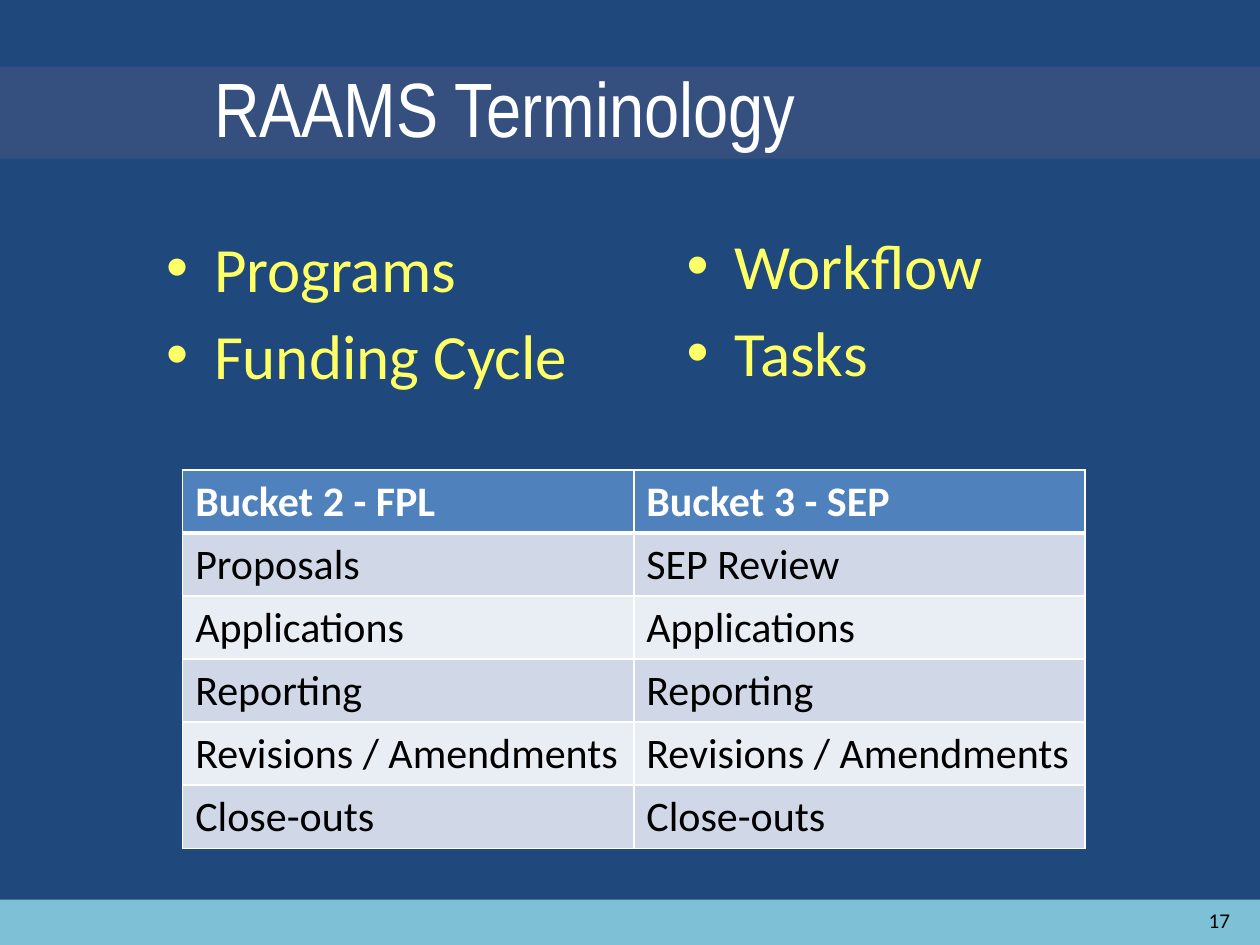
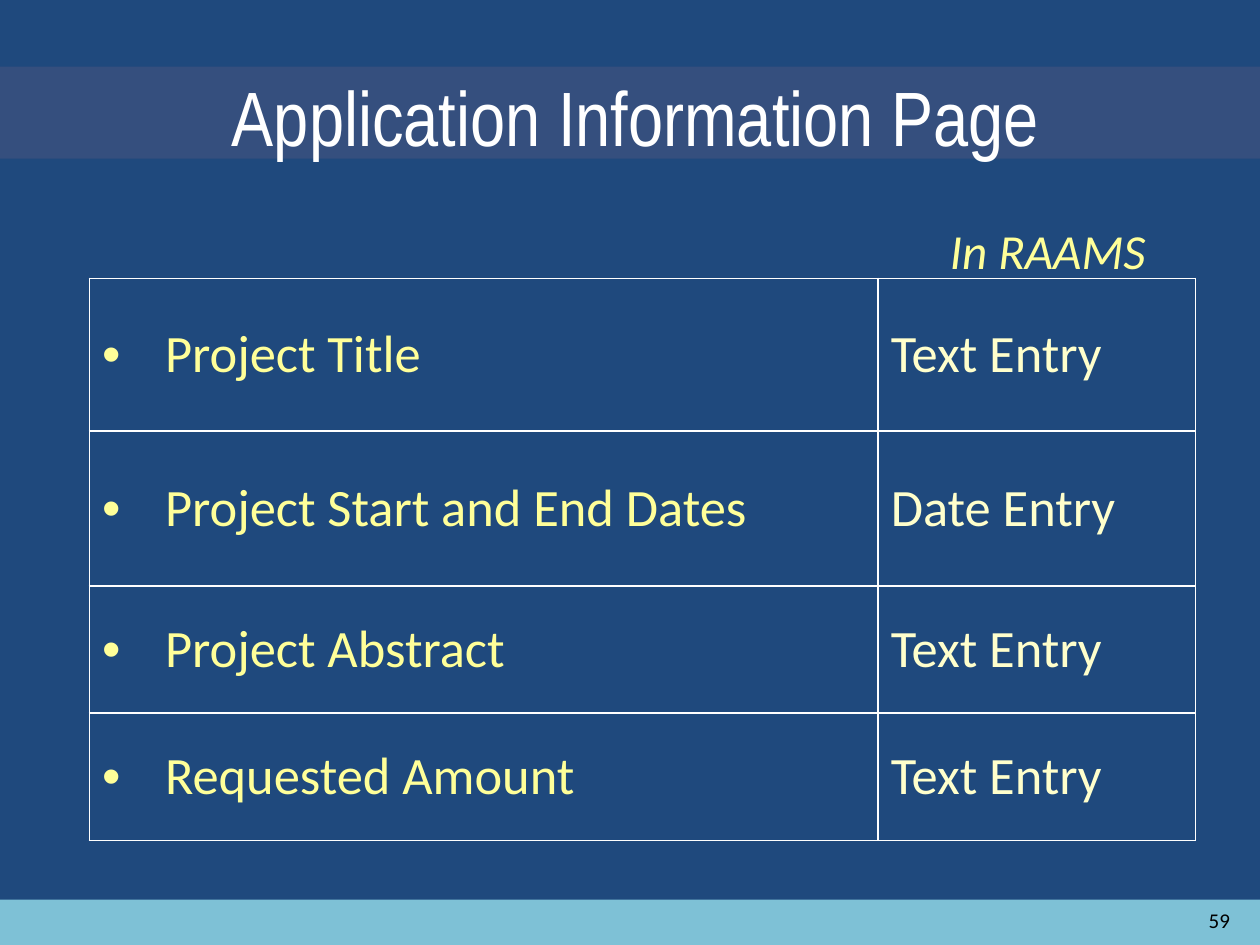
from dataclasses import dataclass
from lxml.etree import SubElement as Sub
from pptx import Presentation
from pptx.dml.color import RGBColor as Rgb
from pptx.enum.shapes import MSO_SHAPE as Kind
from pptx.enum.text import MSO_ANCHOR as Anchor, MSO_AUTO_SIZE as Fit, PP_ALIGN as Align
from pptx.oxml.ns import qn
from pptx.util import Inches, Pt


@dataclass(frozen=True)
class Theme:
    back: str = "1F497D"
    strip: str = "39507F"
    foot: str = "7EC1D6"
    white: str = "FFFFFF"
    black: str = "000000"
    point: str = "FFFF66"
    item: str = "FFFF99"
    entry: str = "FFFFCC"
    head: str = "4F81BD"
    rows: tuple = ("D0D8E8", "E9EDF4")
    face: str = "Calibri"
    display: str = "Arial Narrow"
    title: int = 44
    body: int = 36
    field: int = 30
    label: int = 28
    grid: int = 24
    number: int = 12


class Deck:
    def __init__(self, theme):
        self.theme = theme
        self.file = Presentation()
        self.file.slide_width, self.file.slide_height = Inches(10), Inches(7.5)
        self.slide = None
        fill = self.file.slide_master.background.fill
        fill.solid()
        fill.fore_color.rgb = Rgb.from_string(theme.back)

    def page(self, title, number, place, bottom=0.05):
        t = self.theme
        self.slide = self.file.slides.add_slide(self.file.slide_layouts[5])
        if len(self.file.slides) == 1:
            self.band(0.53, 0.73, t.strip, 87)
            self.band(7.14, 0.38, t.foot)
        box = self.slide.shapes.title
        self.place(box, place)
        frame = box.text_frame
        frame.auto_size = Fit.NONE
        frame.vertical_anchor = Anchor.MIDDLE
        frame.margin_bottom = Inches(bottom)
        para = frame.paragraphs[0]
        para.alignment = Align.LEFT
        self.run(para, title, t.title, t.white, face=t.display)
        self.text((7.53, 7.1, 2.33, 0.4), [str(number)], t.number, t.black,
                  align=Align.RIGHT, anchor=Anchor.MIDDLE)

    def place(self, shape, place):
        shape.left, shape.top, shape.width, shape.height = map(Inches, place)

    def band(self, top, height, color, alpha=100):
        shape = self.slide.shapes.add_shape(
            Kind.RECTANGLE, 0, Inches(top), self.file.slide_width, Inches(height))
        shape.shadow.inherit = False
        shape.line.fill.background()
        shape.fill.solid()
        shape.fill.fore_color.rgb = Rgb.from_string(color)
        if alpha < 100:
            tone = shape.element.spPr.find(f".//{qn('a:srgbClr')}")
            Sub(tone, qn("a:alpha"), val=str(alpha * 1000))
        self.file.slide_master.shapes.element.insert(2, shape.element)

    def run(self, para, text, size, color, face=None, bold=False, italic=False):
        run = para.add_run()
        run.text = text
        font = run.font
        font.name, font.size = face or self.theme.face, Pt(size)
        font.bold, font.italic = bold, italic
        font.color.rgb = Rgb.from_string(color)

    def bullet(self, para, indent):
        props = para._p.get_or_add_pPr()
        props.set("marL", str(Inches(indent)))
        props.set("indent", str(-Inches(indent)))
        Sub(props, qn("a:buFont"), typeface="Arial")
        Sub(props, qn("a:buChar"), char="•")

    def text(self, place, lines, size, color, align=Align.LEFT,
             anchor=Anchor.TOP, indent=0, italic=False):
        box = self.slide.shapes.add_textbox(*map(Inches, place))
        frame = box.text_frame
        frame.word_wrap = True
        frame.vertical_anchor = anchor
        for i, line in enumerate(lines):
            para = frame.add_paragraph() if i else frame.paragraphs[0]
            if indent:
                self.bullet(para, indent)
            if i:
                para.space_before = Pt(6.5)
            para.alignment = align
            self.run(para, line, size, color, italic=italic)

    def edge(self, cell, top=1, bottom=1):
        props = cell._tc.get_or_add_tcPr()
        for side, width in zip("LRTB", (1, 1, top, bottom)):
            line = Sub(props, qn(f"a:ln{side}"), w=str(Pt(width)))
            Sub(Sub(line, qn("a:solidFill")), qn("a:srgbClr"), val=self.theme.white)

    def table(self, left, top, widths, heights, data, style):
        frame = self.slide.shapes.add_table(
            len(data), len(widths), Inches(left), Inches(top),
            Inches(sum(widths)), Inches(sum(heights)))
        grid = frame.table
        grid.first_row = grid.horz_banding = False
        for col, width in zip(grid.columns, widths):
            col.width = Inches(width)
        for row, height in zip(grid.rows, heights):
            row.height = Inches(height)
        for r, line in enumerate(data):
            for c, word in enumerate(line):
                style(grid.cell(r, c), r, c, word)

    def band_cell(self, cell, r, c, word):
        t = self.theme
        head = r == 0
        self.edge(cell, top=3 if r == 1 else 1, bottom=3 if head else 1)
        cell.fill.solid()
        tone = t.head if head else t.rows[(r - 1) % 2]
        cell.fill.fore_color.rgb = Rgb.from_string(tone)
        self.run(cell.text_frame.paragraphs[0], word, t.grid,
                 t.white if head else t.black, bold=head)

    def field_cell(self, cell, r, c, word):
        t = self.theme
        self.edge(cell)
        cell.fill.background()
        cell.vertical_anchor = Anchor.MIDDLE
        para = cell.text_frame.paragraphs[0]
        if c == 0:
            self.bullet(para, 0.5)
        self.run(para, word, t.field, t.entry if c else t.item)


def terms(deck):
    t = deck.theme
    deck.page("RAAMS Terminology", 17, (1.6, 0.58, 7.11, 1.25), bottom=0.77)
    for left, top, lines in ((1.22, 1.77, ("Programs", "Funding Cycle")),
                             (5.35, 1.75, ("Workflow", "Tasks"))):
        deck.text((left, top, 4.42, 4.95), lines, t.body, t.point, indent=0.38)
    steps = [("Bucket 2 - FPL", "Bucket 3 - SEP"), ("Proposals", "SEP Review")]
    shared = ("Applications", "Reporting", "Revisions / Amendments", "Close-outs")
    steps += [(step, step) for step in shared]
    deck.table(1.45, 3.73, [3.58] * 2, [0.5] * len(steps), steps, deck.band_cell)


def fields(deck):
    t = deck.theme
    deck.page("Application Information Page", 59, (1.74, 0.29, 7.57, 1.25))
    deck.text((0.15, 1.7, 9.04, 4.95), ["In RAAMS"], t.label, t.item,
              align=Align.RIGHT, italic=True)
    items = [("Project Title", "Text Entry"),
             ("Project Start and End Dates", "Date Entry"),
             ("Project Abstract", "Text Entry"),
             ("Requested Amount", "Text Entry")]
    deck.table(0.71, 2.21, (6.26, 2.52), (1.21, 1.23, 1.01, 1.01),
               items, deck.field_cell)


def main():
    deck = Deck(Theme())
    terms(deck)
    fields(deck)
    deck.file.save("out.pptx")


if __name__ == "__main__":
    main()
